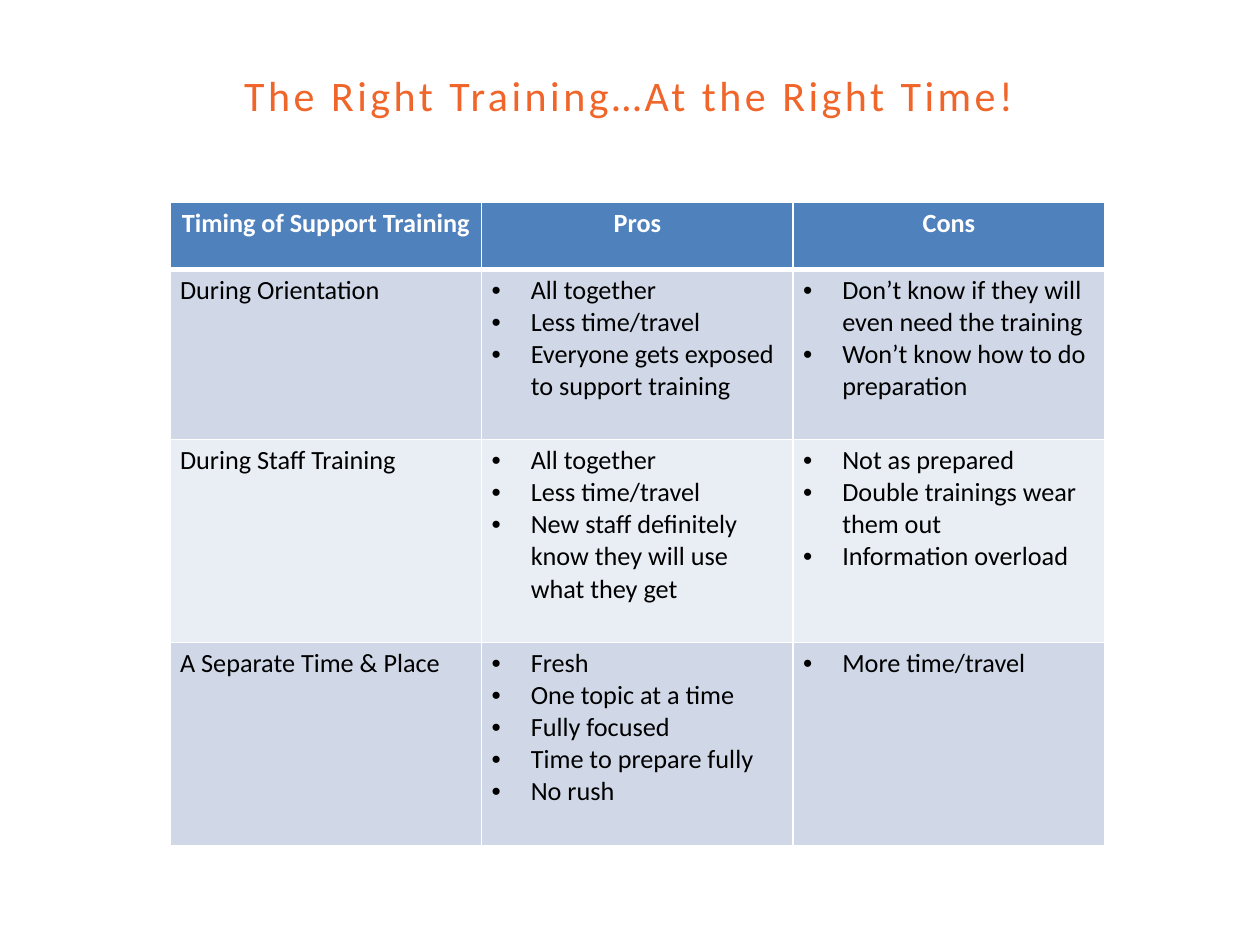
from lxml import etree
from pptx import Presentation
from pptx import util as u
from pptx.dml.color import RGBColor
from pptx.enum import text
from pptx.oxml import ns

COLORS = {
    "title": "F0652A",
    "header": "4F81BD",
    "odd_row": "D0D8E8",
    "even_row": "E9EDF4",
    "white": "FFFFFF",
    "black": "000000",
}
TITLE_FONT = {"name": "Calibri", "size": u.Pt(24), "bold": False}
HEADER_FONT = {"name": "Calibri", "size": u.Pt(15), "bold": True}
BODY_FONT = {**HEADER_FONT, "bold": False}
CELL_FORMAT = {
    "margin_left": u.Cm(0.2), "margin_right": u.Cm(0.2),
    "margin_top": u.Cm(0.1), "margin_bottom": u.Cm(0.1),
    "vertical_anchor": text.MSO_ANCHOR.TOP,
}
BULLET_INDENT = u.Cm(0.79)
ROW_HEIGHTS = [1.35, 3.43, 4.09, 4.09]

HEADERS = ["Timing of Support Training", "Pros", "Cons"]
TIMINGS = [
    ("During Orientation",
     ["All together", "Less time/travel",
      "Everyone gets exposed to support training"],
     ["Don’t know if they will even need the training",
      "Won’t know how to do preparation"]),
    ("During Staff Training",
     ["All together", "Less time/travel",
      "New staff definitely know they will use what they get"],
     ["Not as prepared", "Double trainings wear them out",
      "Information overload"]),
    ("A Separate Time & Place",
     ["Fresh", "One topic at a time", "Fully focused",
      "Time to prepare fully", "No rush"],
     ["More time/travel"]),
]


def rgb(color):
    return RGBColor.from_string(COLORS[color])


def set_attributes(target, values):
    for name, value in values.items():
        setattr(target, name, value)


def write_run(paragraph, content, font, color):
    run = paragraph.add_run()
    run.text = content
    set_attributes(run.font, font)
    run.font.color.rgb = rgb(color)
    return run


def add_bullet(paragraph):
    properties = paragraph._p.get_or_add_pPr()
    properties.set("marL", str(BULLET_INDENT))
    properties.set("indent", str(-BULLET_INDENT))
    etree.SubElement(properties, ns.qn("a:buFont"), typeface="Arial")
    etree.SubElement(properties, ns.qn("a:buChar"), char="•")


def add_borders(cell, widths):
    properties = cell._tc.get_or_add_tcPr()
    for side, width in widths.items():
        line = etree.SubElement(properties, ns.qn(f"a:ln{side}"), w=str(u.Pt(width)))
        fill = etree.SubElement(line, ns.qn("a:solidFill"))
        etree.SubElement(fill, ns.qn("a:srgbClr"), val=COLORS["white"])


def add_title(slide, left, top, width, height):
    frame = slide.shapes.add_textbox(left, top, width, height).text_frame
    set_attributes(frame, {"word_wrap": True,
                           "vertical_anchor": text.MSO_ANCHOR.MIDDLE})
    paragraph = frame.paragraphs[0]
    paragraph.alignment = text.PP_ALIGN.CENTER
    run = write_run(paragraph, "The Right Training…At the Right Time!",
                    TITLE_FONT, "title")
    run.font._element.set("spc", "200")


def fill_cell(cell, items, row, bulleted):
    is_header = row == 0
    # Borders come before the fill in the cell properties
    top, bottom = {0: (1, 3), 1: (3, 1)}.get(row, (1, 1))
    add_borders(cell, {"L": 1, "R": 1, "T": top, "B": bottom})
    fill = "header" if is_header else "odd_row" if row % 2 else "even_row"
    cell.fill.solid()
    cell.fill.fore_color.rgb = rgb(fill)
    set_attributes(cell, CELL_FORMAT)

    frame = cell.text_frame
    for index, item in enumerate(items):
        paragraph = frame.add_paragraph() if index else frame.paragraphs[0]
        if bulleted:
            add_bullet(paragraph)
        if is_header:
            paragraph.alignment = text.PP_ALIGN.CENTER
        write_run(paragraph, item, HEADER_FONT if is_header else BODY_FONT,
                  "white" if is_header else "black")


def add_timing_table(slide, left, top, width, height):
    rows = [[[header] for header in HEADERS]]
    rows += [[[timing], pros, cons] for timing, pros, cons in TIMINGS]
    table = slide.shapes.add_table(len(rows), len(HEADERS),
                                   left, top, width, height).table
    for table_row, row_height in zip(table.rows, ROW_HEIGHTS):
        table_row.height = u.Cm(row_height)
    for row, cells in enumerate(rows):
        for column, items in enumerate(cells):
            fill_cell(table.cell(row, column), items, row,
                      bulleted=row > 0 and column > 0)


def main():
    presentation = Presentation()
    presentation.slide_width, presentation.slide_height = u.Cm(25.4), u.Cm(19.05)
    slide = presentation.slides.add_slide(presentation.slide_layouts[6])

    add_timing_table(slide, u.Cm(3.43), u.Cm(4.08), u.Cm(18.84),
                     u.Cm(sum(ROW_HEIGHTS)))
    add_title(slide, u.Cm(3.2), u.Cm(1.14), u.Cm(18.97), u.Cm(1.52))

    presentation.save("out.pptx")


if __name__ == "__main__":
    main()
